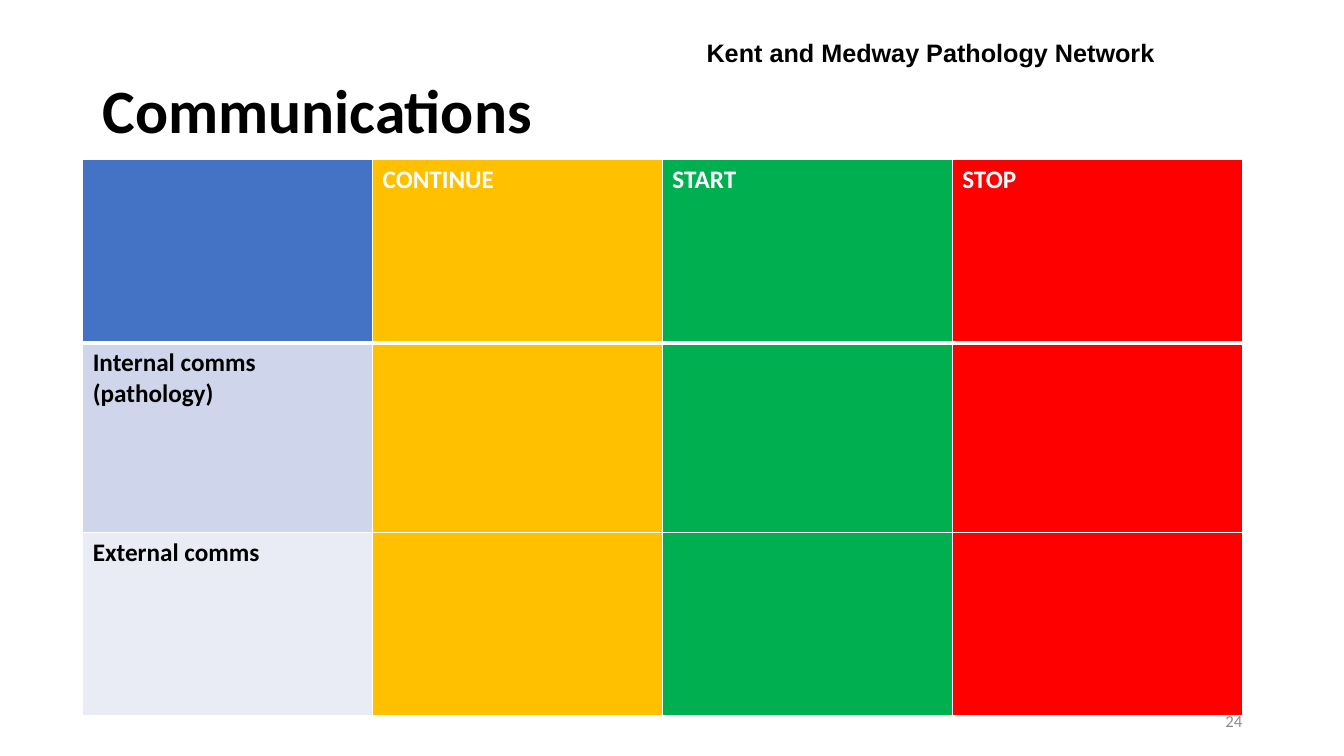
from lxml import etree
from pptx import Presentation
from pptx import util as u
from pptx.dml.color import RGBColor
from pptx.enum import text
from pptx.oxml import ns

WHITE = RGBColor(0xFF, 0xFF, 0xFF)
BLACK = RGBColor(0x00, 0x00, 0x00)
GREY = RGBColor(0x8C, 0x8C, 0x8C)
BLUE = RGBColor(0x44, 0x72, 0xC4)
AMBER = RGBColor(0xFF, 0xC0, 0x00)
GREEN = RGBColor(0x00, 0xB0, 0x50)
RED = RGBColor(0xFF, 0x00, 0x00)
BAND_DARK = RGBColor(0xCF, 0xD5, 0xEA)
BAND_LIGHT = RGBColor(0xE9, 0xEB, 0xF5)

PX = 9144


class SlideBuilder:
    def __init__(self, prs, font):
        self.s = prs.slides.add_slide(prs.slide_layouts[6])
        self.font = font

    def add_text(self, p, content, color, **fmt):
        r = p.add_run()
        r.text = content
        for name, value in {"name": self.font, "size": u.Pt(18), "bold": True, **fmt}.items():
            setattr(r.font, name, value)
        r.font.color.rgb = color

    def text_box(self, box, content, color, frame=None, para=None, **fmt):
        sp = self.s.shapes.add_textbox(*(v * PX for v in box))
        tf = sp.text_frame
        for name, value in {"word_wrap": True, **(frame or {})}.items():
            setattr(tf, name, value)
        p = tf.paragraphs[0]
        for name, value in (para or {}).items():
            setattr(p, name, value)
        self.add_text(p, content, color, **fmt)

    def border(self, cell, side, points):
        ln = etree.SubElement(cell._tc.get_or_add_tcPr(), ns.qn(f"a:ln{side}"), w=str(u.Pt(points)))
        fill = etree.SubElement(ln, ns.qn("a:solidFill"))
        etree.SubElement(fill, ns.qn("a:srgbClr"), val=str(WHITE))

    def table(self, box, heights, labels, fills):
        x, y, w, h = (v * PX for v in box)
        cols = len(fills[0])
        tbl = self.s.shapes.add_table(len(heights), cols, x, y, w, h).table
        for name in ("first_row", "horz_banding"):
            setattr(tbl, name, False)
        for col in tbl.columns:
            col.width = w // cols
        for i, height in enumerate(heights):
            tbl.rows[i].height = height * PX
            widths = {"L": 1, "R": 1, "T": 3 if i == 1 else 1, "B": 3 if i == 0 else 1}
            for j, color in enumerate(fills[i]):
                cell = tbl.cell(i, j)
                for side, points in widths.items():
                    self.border(cell, side, points)
                cell.fill.solid()
                cell.fill.fore_color.rgb = color
                label = labels.get((i, j))
                if label:
                    self.add_text(cell.text_frame.paragraphs[0], label, BLACK if i else WHITE)


def main():
    prs = Presentation()
    prs.slide_width, prs.slide_height = u.Inches(13.33), u.Inches(7.5)
    b = SlideBuilder(prs, "Calibri")
    middle = {"vertical_anchor": text.MSO_ANCHOR.MIDDLE}

    b.text_box((92, 40, 1150, 145), "Communications", BLACK,
               middle, {"line_spacing": 0.9}, size=u.Pt(44))
    b.table((82, 158, 1150, 552), (182, 188, 182),
            {(0, 1): "CONTINUE", (0, 2): "START", (0, 3): "STOP",
             (1, 0): "Internal comms (pathology)", (2, 0): "External comms"},
            [(first, AMBER, GREEN, RED) for first in (BLUE, BAND_DARK, BAND_LIGHT)])
    b.text_box((942, 695, 300, 40), "24", GREY,
               middle, {"alignment": text.PP_ALIGN.RIGHT}, size=u.Pt(12), bold=False)
    b.text_box((691, 32, 476, 40), "Kent and Medway Pathology Network", BLACK,
               {"word_wrap": False, "auto_size": text.MSO_AUTO_SIZE.SHAPE_TO_FIT_TEXT},
               name="Arial")
    prs.save("out.pptx")


if __name__ == "__main__":
    main()
